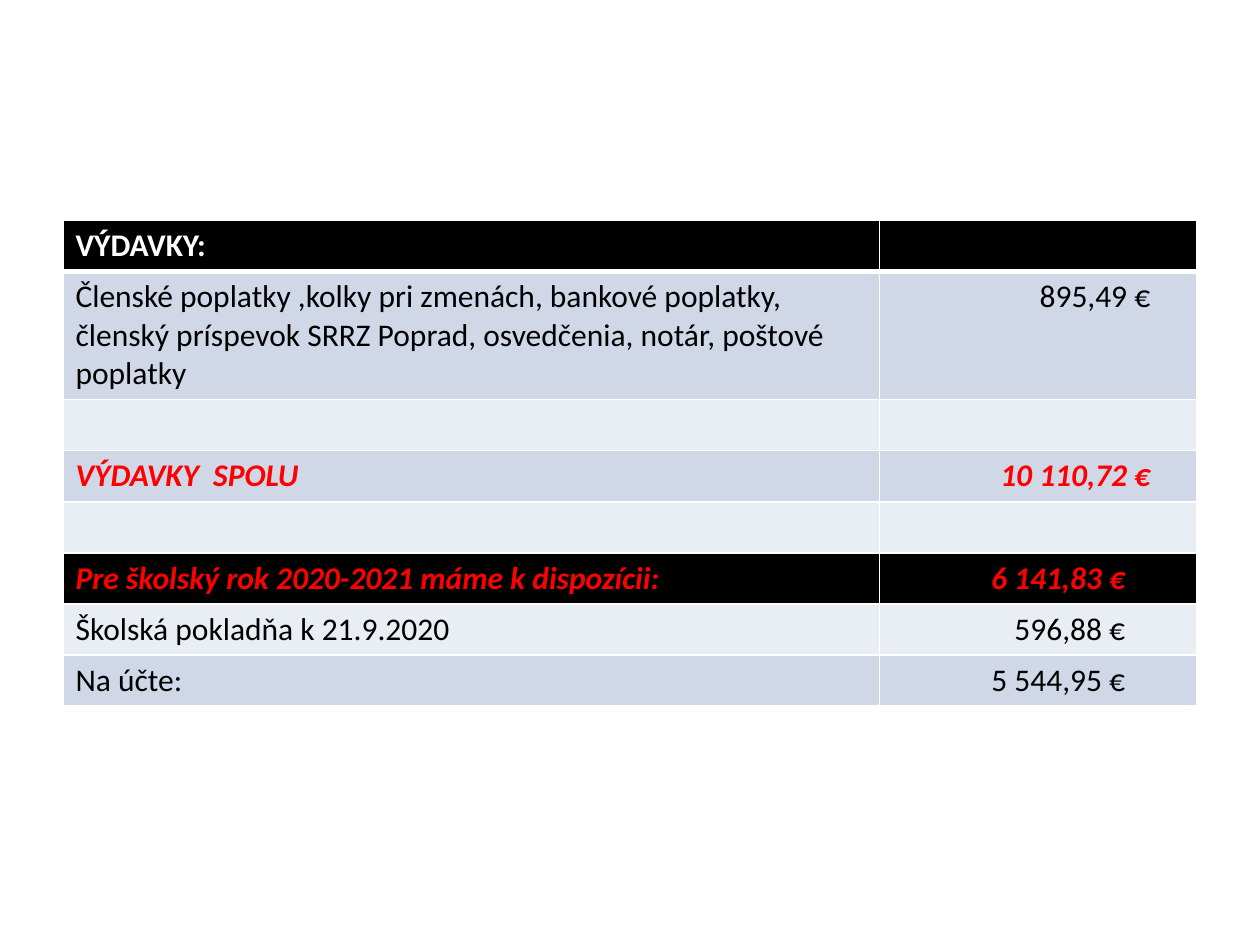
import pptx
import pptx.util
import pptx.dml.color
import pptx.enum.text
import pptx.oxml.ns
import lxml.etree

Inches, Pt = pptx.util.Inches, pptx.util.Pt
RGBColor = pptx.dml.color.RGBColor
ALIGN = pptx.enum.text.PP_ALIGN

WHITE = RGBColor(0xFF, 0xFF, 0xFF)
BLACK = RGBColor(0x00, 0x00, 0x00)
RED = RGBColor(0xFF, 0x00, 0x00)
BAND_DARK = RGBColor(0xD0, 0xD8, 0xE8)
BAND_LIGHT = RGBColor(0xE9, 0xED, 0xF4)

# Text formats of the rows
HEADER = dict(color=WHITE, bold=True)
PLAIN = dict(color=BLACK)
TOTAL = dict(color=RED, bold=True, italic=True)

# Label, amount, right inset of the amount in inches, fill, format
EXPENSES = [
    ("VÝDAVKY:", "", 0.1, BLACK, HEADER),
    ("Členské poplatky ,kolky pri zmenách, bankové poplatky, členský "
     "príspevok SRRZ Poprad, osvedčenia, notár, poštové poplatky",
     "895,49 €", 0.37, BAND_DARK, PLAIN),
    ("", "", 0.1, BAND_LIGHT, PLAIN),
    ("VÝDAVKY  SPOLU", "10 110,72 €", 0.37, BAND_DARK, TOTAL),
    ("", "", 0.1, BAND_LIGHT, PLAIN),
    ("Pre školský rok 2020-2021 máme k dispozícii:", "6 141,83 €", 0.57, BLACK, TOTAL),
    ("Školská pokladňa k 21.9.2020", "596,88 €", 0.57, BAND_LIGHT, PLAIN),
    ("Na účte:", "5 544,95 €", 0.57, BAND_DARK, PLAIN),
]
WRAPPED_ROW = 1


def write(tf, text, color=BLACK, bold=False, italic=False, align=ALIGN.LEFT):
    p = tf.paragraphs[0]
    p.alignment = align
    p.font.size = Pt(18)
    if text:
        r = p.add_run()
        r.text = text
        f = r.font
        f.name, f.size, f.bold, f.italic = "Calibri", Pt(18), bold, italic
        f.color.rgb = color


def set_borders(cell, bottom=1, top=1):
    """Put white lines round the cell, ahead of its fill."""
    qn = pptx.oxml.ns.qn
    tcPr = cell._tc.get_or_add_tcPr()
    widths = {"a:lnL": 1, "a:lnR": 1, "a:lnT": top, "a:lnB": bottom}
    for i, (tag, width) in enumerate(widths.items()):
        ln = lxml.etree.Element(qn(tag), w=str(Pt(width)))
        fill = lxml.etree.SubElement(ln, qn("a:solidFill"))
        lxml.etree.SubElement(fill, qn("a:srgbClr"), val=str(WHITE))
        tcPr.insert(i, ln)


def add_expense_table(s, left, top, width, height):
    table = s.shapes.add_table(len(EXPENSES), 2, left, top, width, height).table
    table.columns[0].width = int(width * 0.72)
    table.columns[1].width = width - table.columns[0].width

    # The wrapped row takes what the single-line rows leave
    line = Inches(0.405)
    for row in table.rows:
        row.height = line
    table.rows[WRAPPED_ROW].height = height - line * (len(EXPENSES) - 1)

    for i, (label, amount, inset, fill, style) in enumerate(EXPENSES):
        name_cell, amount_cell = table.cell(i, 0), table.cell(i, 1)
        write(name_cell.text_frame, label, **style)
        write(amount_cell.text_frame, amount, align=ALIGN.RIGHT, **style)
        amount_cell.margin_right = Inches(inset)
        for cell in (name_cell, amount_cell):
            cell.fill.solid()
            cell.fill.fore_color.rgb = fill
            set_borders(cell, bottom=3 if i == 0 else 1, top=3 if i == 1 else 1)


def main():
    prs = pptx.Presentation()
    prs.slide_width, prs.slide_height = Inches(10), Inches(7.5)
    s = prs.slides.add_slide(prs.slide_layouts[6])
    add_expense_table(s, Inches(0.5), Inches(1.75), Inches(9), Inches(3.84))
    prs.save("out.pptx")


if __name__ == "__main__":
    main()
